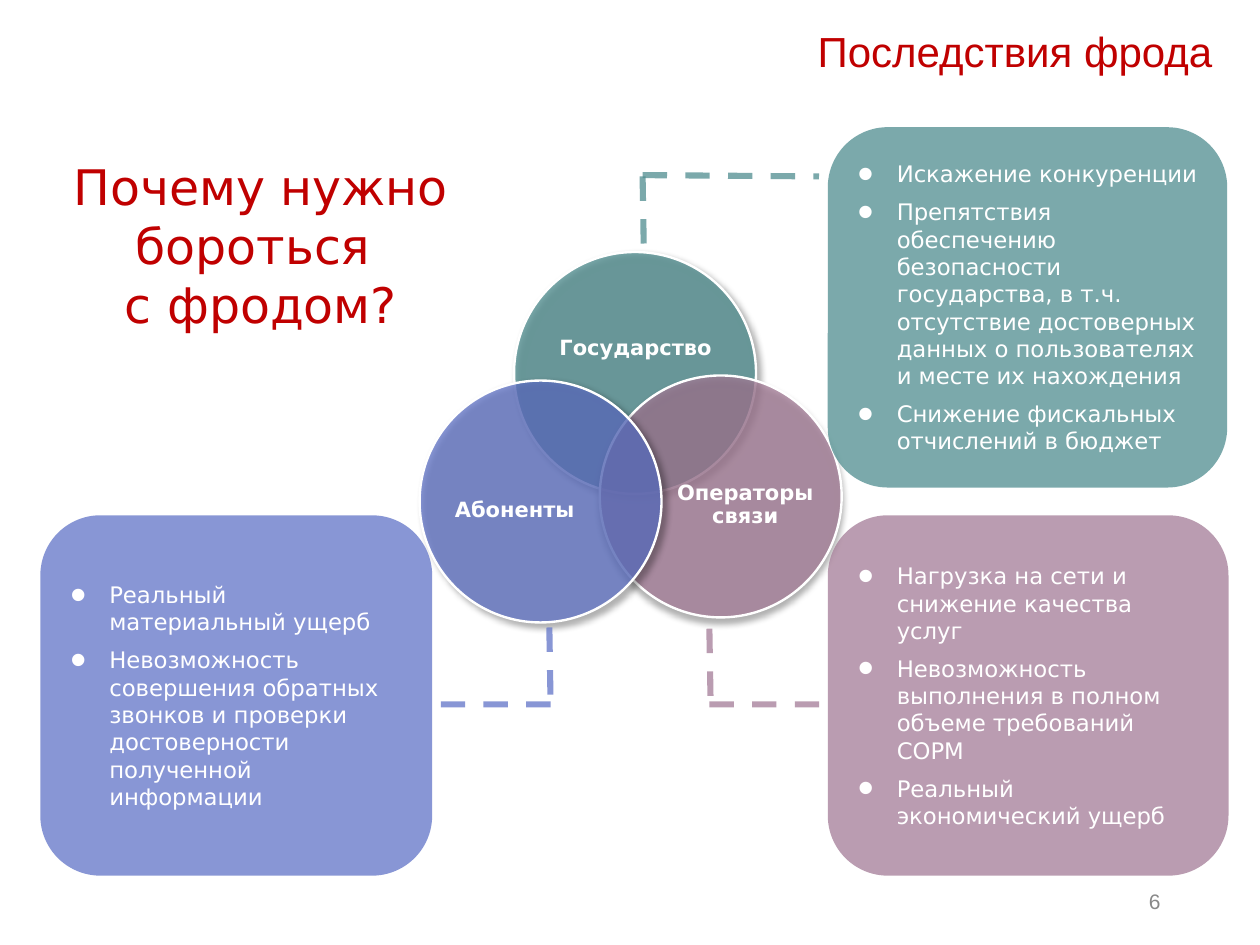
from lxml.etree import SubElement
from pptx import Presentation
from pptx.dml.color import RGBColor
from pptx.enum.dml import MSO_LINE
from pptx.enum.shapes import MSO_CONNECTOR, MSO_SHAPE
from pptx.enum.text import MSO_ANCHOR, PP_ALIGN
from pptx.oxml.ns import qn
from pptx.util import Inches, Pt

TEAL = RGBColor(0x4F, 0x8D, 0x8F)
MAUVE = RGBColor(0xA4, 0x7C, 0x97)
BLUE = RGBColor(0x61, 0x74, 0xC7)
RED = RGBColor(0xC0, 0x00, 0x00)
GRAY = RGBColor(0x89, 0x89, 0x89)
WHITE = RGBColor(0xFF, 0xFF, 0xFF)
BODY_FONT, HEAD_FONT = "DejaVu Sans", "Arial"
OPACITY = 75
CIRCLE_SIZE = 1.92

CIRCLES = [
    ("Государство", TEAL, (4.08, 2), (4.34, 2.34, 1.41, 0.86), 45),
    ("Операторы связи", MAUVE, (4.76, 2.98), (5.34, 3.48, 1.15, 1.06), 90),
    ("Абоненты", BLUE, (3.33, 3.02), (3.51, 3.52, 1.15, 1.06), 45),
]
CARDS = [
    (TEAL, (6.57, 1.01, 3.17, 2.86), [
        "Искажение конкуренции",
        "Препятствия обеспечению безопасности государства, в т.ч. "
        "отсутствие достоверных данных о пользователях и месте их нахождения",
        "Снижение фискальных отчислений в бюджет"]),
    (BLUE, (0.32, 4.09, 3.11, 2.86), [
        "Реальный материальный ущерб",
        "Невозможность совершения обратных звонков и проверки "
        "достоверности полученной информации"]),
    (MAUVE, (6.57, 4.09, 3.18, 2.86), [
        "Нагрузка на сети и снижение качества услуг",
        "Невозможность выполнения в полном объеме требований СОРМ",
        "Реальный экономический ущерб"]),
]
LINKS = [
    (MAUVE, [(5.63, 4.99, 5.64, 5.59), (5.63, 5.59, 6.58, 5.59)]),
    (TEAL, [(5.1, 1.4, 5.11, 2), (5.1, 1.39, 6.5, 1.4)]),
    (BLUE, [(4.36, 4.98, 4.37, 5.59), (4.37, 5.59, 3.44, 5.59)]),
]


def apply(target, values):
    """Set every attribute named in a dict of format values."""
    for name, value in values.items():
        setattr(target, name, value)


def inches(box):
    """Turn plain numbers into lengths."""
    return [Inches(value) for value in box]


def set_opacity(shape):
    """Make the solid colour of a fill or line see-through."""
    color = next(shape._element.spPr.iter(qn("a:srgbClr")))
    SubElement(color, qn("a:alpha"), val=str(OPACITY * 1000))


def add_shadow(shape, angle):
    """Give a shape a soft outer shadow."""
    effects = shape._element.spPr.find(qn("a:effectLst"))
    outer = SubElement(effects, qn("a:outerShdw"), blurRad=str(Pt(4)), dist=str(Pt(3)),
                       dir=str(angle * 60000), algn="ctr", rotWithShape="0")
    color = SubElement(outer, qn("a:srgbClr"), val="000000")
    SubElement(color, qn("a:alpha"), val="40000")


def add_bullet(para):
    """Give a paragraph a large hanging bullet."""
    props = para._p.get_or_add_pPr()
    indent = Inches(0.31)
    props.set("marL", str(indent))
    props.set("indent", str(-indent))
    SubElement(props, qn("a:buSzPct"), val="200000")
    SubElement(props, qn("a:buFont"), typeface=HEAD_FONT)
    SubElement(props, qn("a:buChar"), char="•")


def write(frame, lines, font, para_format, frame_format=None):
    """Fill a text frame with one paragraph a line."""
    apply(frame, {"word_wrap": True, **(frame_format or {})})
    for index, line in enumerate(lines):
        para = frame.add_paragraph() if index else frame.paragraphs[0]
        apply(para, para_format)
        span = para.add_run()
        span.text = line
        color = font["color"]
        apply(span.font, {key: font[key] for key in font if key != "color"})
        span.font.color.rgb = color


def add_filled(shapes, kind, box, color):
    """Place a see-through shape with no outline or shadow."""
    shape = shapes.add_shape(kind, *inches(box))
    shape.shadow.inherit = False
    shape.fill.solid()
    shape.fill.fore_color.rgb = color
    shape.line.fill.background()
    set_opacity(shape)
    return shape


def add_text(shapes, box, lines, font, align, frame_format=None, **para_format):
    """Place a plain text box."""
    text = shapes.add_textbox(*inches(box))
    write(text.text_frame, lines, font, {"alignment": align, **para_format}, frame_format)


def add_circles(page):
    """Place the three overlapping circles as a group."""
    shapes = page.shapes.add_group_shape().shapes
    font = {"size": Pt(12), "name": BODY_FONT, "bold": True, "color": WHITE}
    margins = {f"margin_{side}": 0 for side in ("left", "right", "top", "bottom")}
    for label, color, corner, label_box, angle in CIRCLES:
        box = (*corner, CIRCLE_SIZE, CIRCLE_SIZE)
        circle = add_filled(shapes, MSO_SHAPE.OVAL, box, color)
        circle.line.color.rgb = WHITE
        circle.line.width = Pt(1.35)
        add_shadow(circle, angle)
        add_text(shapes, label_box, [label], font, PP_ALIGN.CENTER,
                 {"vertical_anchor": MSO_ANCHOR.MIDDLE, **margins}, line_spacing=0.9)


def add_card(page, color, box, items):
    """Place a rounded card with a bulleted list."""
    card = add_filled(page.shapes, MSO_SHAPE.ROUNDED_RECTANGLE, box, color)
    write(card.text_frame, items, {"size": Pt(13), "name": BODY_FONT, "color": WHITE},
          {"alignment": PP_ALIGN.LEFT, "space_after": Pt(6)},
          {"vertical_anchor": MSO_ANCHOR.MIDDLE})
    for para in card.text_frame.paragraphs:
        add_bullet(para)


def add_link(page, color, ends):
    """Place one dashed line between a circle and its card."""
    link = page.shapes.add_connector(MSO_CONNECTOR.STRAIGHT, *inches(ends))
    link.line.color.rgb = color
    apply(link.line, {"width": Pt(3.5), "dash_style": MSO_LINE.DASH})
    set_opacity(link)
    SubElement(link._element.spPr, qn("a:effectLst"))


def add_headings(page):
    """Place the title, the question and the page number."""
    middle = {"vertical_anchor": MSO_ANCHOR.MIDDLE}
    add_text(page.shapes, (8.81, 6.95, 0.5, 0.4), ["6"],
             {"size": Pt(12), "name": HEAD_FONT, "color": GRAY}, PP_ALIGN.RIGHT, middle)
    add_text(page.shapes, (1.48, 0.15, 8.24, 0.5), ["Последствия фрода"],
             {"size": Pt(24), "name": HEAD_FONT, "color": RED}, PP_ALIGN.RIGHT)
    question = page.shapes.add_shape(MSO_SHAPE.ROUNDED_RECTANGLE,
                                     *inches((0.13, 0.85, 3.88, 2.19)))
    question.shadow.inherit = False
    question.fill.background()
    question.line.fill.background()
    write(question.text_frame, ["Почему нужно бороться ", "с фродом?"],
          {"size": Pt(28), "name": BODY_FONT, "color": RED},
          {"alignment": PP_ALIGN.CENTER}, middle)


def main():
    """Build the deck and save it."""
    deck = Presentation()
    apply(deck, {"slide_width": Inches(10), "slide_height": Inches(7.5)})
    page = deck.slides.add_slide(deck.slide_layouts[6])
    add_headings(page)
    add_circles(page)
    for card in CARDS:
        add_card(page, *card)
    for color, lines in LINKS:
        for ends in lines:
            add_link(page, color, ends)
    deck.save("out.pptx")


if __name__ == "__main__":
    main()
